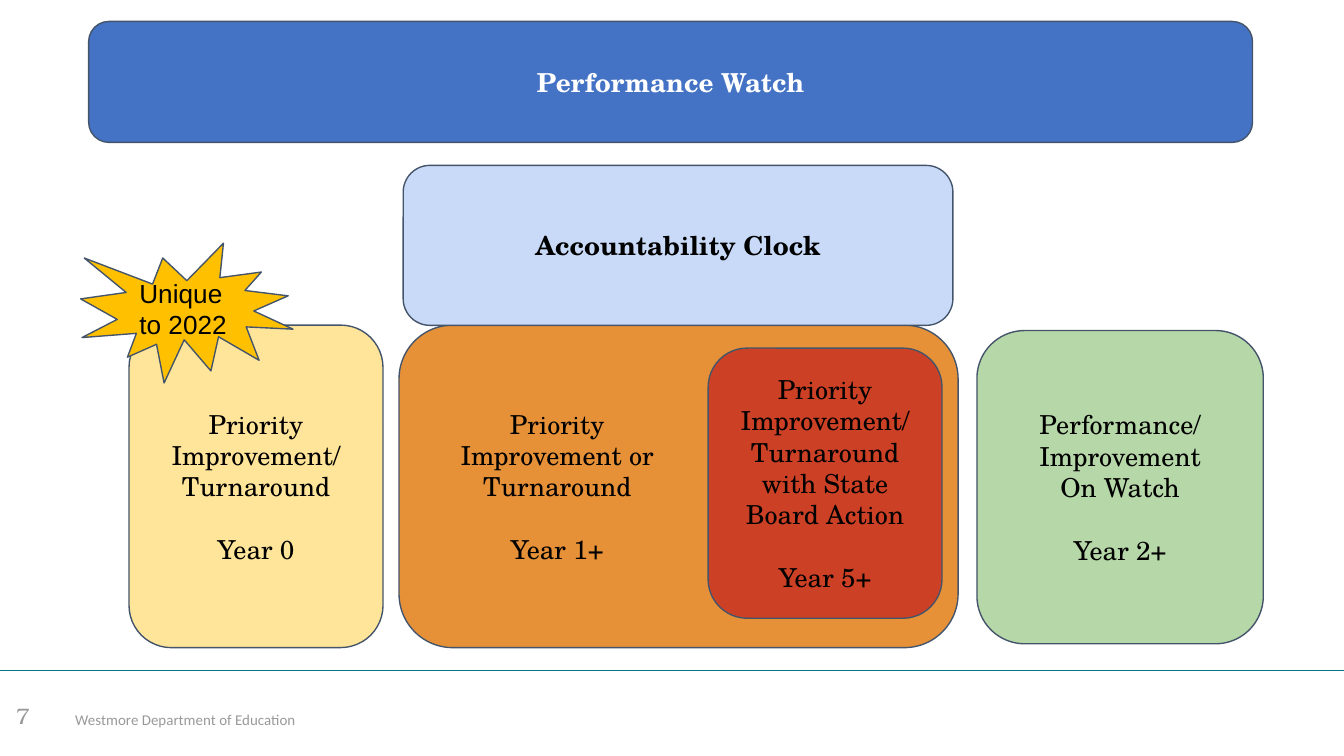
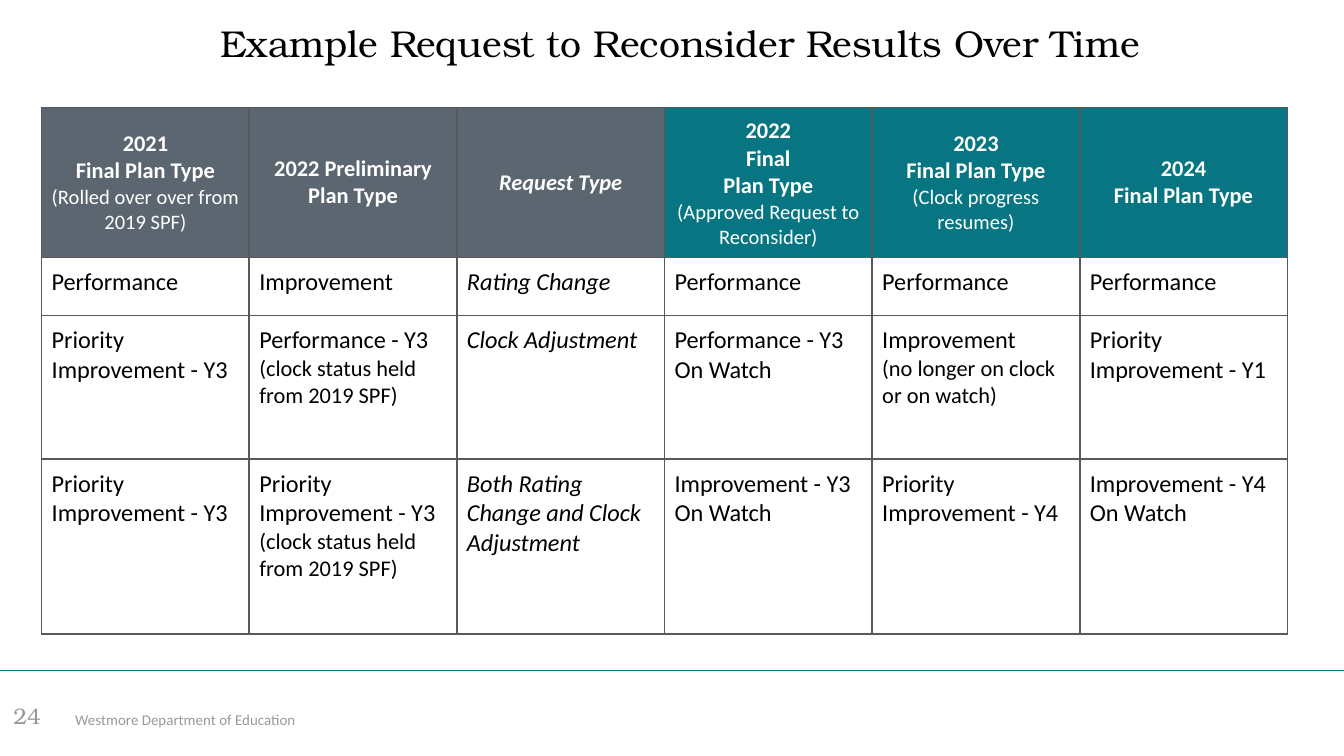
from lxml.etree import SubElement
from pptx import Presentation
from pptx.dml.color import RGBColor
from pptx.enum.shapes import MSO_CONNECTOR as CONNECTOR, MSO_SHAPE as SHAPE
from pptx.enum.text import MSO_ANCHOR as ANCHOR, PP_ALIGN as ALIGN
from pptx.oxml.ns import qn
from pptx.util import Pt

WHITE = RGBColor(0xFF, 0xFF, 0xFF)
BLACK = RGBColor(0x00, 0x00, 0x00)
GRAY = RGBColor(0x99, 0x99, 0x99)
TEAL = RGBColor(0x07, 0x76, 0x82)
SLATE = RGBColor(0x5C, 0x66, 0x70)
OUTLINE = RGBColor(0x44, 0x54, 0x6A)
GRID = RGBColor(0x59, 0x59, 0x59)
BLUE = RGBColor(0x44, 0x72, 0xC4)
PALE_BLUE = RGBColor(0xC9, 0xDA, 0xF8)
ORANGE = RGBColor(0xE6, 0x91, 0x38)
YELLOW = RGBColor(0xFF, 0xE5, 0x99)
GREEN = RGBColor(0xB6, 0xD7, 0xA8)
RED = RGBColor(0xCC, 0x41, 0x25)
GOLD = RGBColor(0xFF, 0xC0, 0x00)

BODY_FONT = "Calibri"
TITLE_FONT = "TeX Gyre Bonum"
BOX_FONT = "TeX Gyre Schola"

PLAN_ROWS = [
    ["2021\nFinal Plan Type\n(Rolled over over from 2019 SPF)", "2022 Preliminary Plan Type",
     "Request Type", "2022\nFinal\nPlan Type\n(Approved Request to Reconsider)",
     "2023\nFinal Plan Type\n(Clock progress resumes)", "2024\nFinal Plan Type"],
    ["Performance", "Improvement", "Rating Change", "Performance", "Performance",
     "Performance"],
    ["Priority Improvement - Y3", "Performance - Y3 (clock status held from 2019 SPF)",
     "Clock Adjustment", "Performance - Y3 On Watch",
     "Improvement\n(no longer on clock or on watch)", "Priority Improvement - Y1"],
    ["Priority Improvement - Y3",
     "Priority Improvement - Y3 (clock status held from 2019 SPF)",
     "Both Rating Change and Clock Adjustment", "Improvement - Y3 On Watch",
     "Priority Improvement - Y4", "Improvement - Y4 On Watch"],
]
ROW_HEIGHTS = [72, 31, 77, 93.6]
COLUMN_WIDTH = 111.24
REQUEST_COLUMN = 2


def write(frame, text, size=14, font=BODY_FONT, color=BLACK, bold=False, italic=False,
          align=ALIGN.LEFT, note_size=None, last_gap=0):
    """Fill a text frame line by line, with parenthesised notes in their own size."""
    frame.word_wrap = True
    lines = text.split("\n")
    for index, line in enumerate(lines):
        paragraph = frame.paragraphs[0] if index == 0 else frame.add_paragraph()
        paragraph.alignment = align
        if index and index == len(lines) - 1:
            paragraph.space_before = Pt(last_gap)
        main, bracket, rest = line.partition("(")
        for words, is_note in ((main, False), (bracket + rest, True)):
            if words:
                run = paragraph.add_run()
                run.text = words
                run.font.size = Pt(note_size if is_note and note_size else size)
                run.font.name = font
                run.font.color.rgb = color
                run.font.bold = bold and not is_note
                run.font.italic = italic


def set_insets(target, inset, right=None):
    """Set the inner margins of a text frame or table cell."""
    target.margin_left = target.margin_top = target.margin_bottom = Pt(inset)
    target.margin_right = Pt(inset if right is None else right)


def set_borders(cell):
    """Draw the grid line on all four sides of a cell."""
    properties = cell._tc.get_or_add_tcPr()
    for position, side in enumerate(("a:lnL", "a:lnR", "a:lnT", "a:lnB")):
        border = SubElement(properties, qn(side), w=str(Pt(1)))
        fill = SubElement(border, qn("a:solidFill"))
        SubElement(fill, qn("a:srgbClr"), val=str(GRID))
        properties.insert(position, border)


class Deck:
    """Holds the shared style and the current slide."""

    def __init__(self):
        """Start an empty presentation."""
        self.presentation = Presentation()
        self.presentation.slide_width = Pt(720)
        self.presentation.slide_height = Pt(405)
        self.slide = None

    def new_slide(self, number, number_left):
        """Add a blank slide with the shared footer."""
        self.slide = self.presentation.slides.add_slide(self.presentation.slide_layouts[6])
        self.label(40.3, 380.9, 232.6, 9.4, "Westmore Department of Education",
                   size=8, color=GRAY)
        self.rule(359.3)
        self.label(number_left, 367.9, 43.2, 31, number, anchor=ANCHOR.MIDDLE,
                   size=12, font=TITLE_FONT, color=GRAY)

    def label(self, left, top, width, height, text, inset=0, anchor=ANCHOR.TOP, **style):
        """Add a text box."""
        box = self.slide.shapes.add_textbox(Pt(left), Pt(top), Pt(width), Pt(height))
        set_insets(box.text_frame, inset)
        box.text_frame.vertical_anchor = anchor
        write(box.text_frame, text, **style)

    def rule(self, top):
        """Add a teal line across the slide."""
        line = self.slide.shapes.add_connector(
            CONNECTOR.STRAIGHT, Pt(0), Pt(top), Pt(720), Pt(top))
        line.line.color.rgb = TEAL
        line.line.width = Pt(0.75)
        SubElement(line._element.spPr, qn("a:effectLst"))

    def box(self, left, top, width, height, fill, text, right=7.2,
            kind=SHAPE.FLOWCHART_ALTERNATE_PROCESS, font=BOX_FONT, align=ALIGN.CENTER,
            **style):
        """Add a filled, outlined shape with text."""
        shape = self.slide.shapes.add_shape(kind, Pt(left), Pt(top), Pt(width), Pt(height))
        shape.shadow.inherit = False
        shape.fill.solid()
        shape.fill.fore_color.rgb = fill
        shape.line.color.rgb = OUTLINE
        shape.line.width = Pt(0.75)
        set_insets(shape.text_frame, 7.2, right)
        shape.text_frame.vertical_anchor = ANCHOR.MIDDLE
        write(shape.text_frame, text, font=font, align=align, **style)

    def table(self, left, top, rows, heights, column_width):
        """Add the plan type table with a coloured header row."""
        columns = len(rows[0])
        grid = self.slide.shapes.add_table(
            len(rows), columns, Pt(left), Pt(top),
            Pt(column_width * columns), Pt(sum(heights))).table
        grid.first_row = grid.horz_banding = False
        for column in grid.columns:
            column.width = Pt(column_width)
        for r, (texts, height) in enumerate(zip(rows, heights)):
            grid.rows[r].height = Pt(height)
            for c, text in enumerate(texts):
                self.cell(grid.cell(r, c), text, r == 0, c)

    def cell(self, cell, text, is_header, column):
        """Format and fill one table cell."""
        set_insets(cell, 5.4)
        italic = column == REQUEST_COLUMN
        if is_header:
            cell.fill.solid()
            cell.fill.fore_color.rgb = SLATE if column <= REQUEST_COLUMN else TEAL
            cell.vertical_anchor = ANCHOR.MIDDLE
            write(cell.text_frame, text, size=12, note_size=11, color=WHITE, bold=True,
                  italic=italic, align=ALIGN.CENTER)
        else:
            if italic:
                cell.fill.solid()
                cell.fill.fore_color.rgb = WHITE
            else:
                cell.fill.background()
            write(cell.text_frame, text, size=13, note_size=12, italic=italic)
        set_borders(cell)


def build_watch_slide(deck):
    """Show how the clock years sit under performance watch."""
    year_gap = 16.8
    deck.new_slide("7", 8.6)
    deck.box(47.5, 11.5, 623.5, 64.8, BLUE, "Performance Watch", color=WHITE, bold=True)
    deck.box(213.8, 174.2, 299.5, 172.8, ORANGE,
             "Priority Improvement or Turnaround\nYear 1+", right=137, last_gap=year_gap)
    deck.box(69.1, 174.2, 136.1, 172.8, YELLOW,
             "Priority Improvement/ Turnaround\nYear 0", last_gap=year_gap)
    deck.box(523.4, 177.1, 153.4, 167.8, GREEN,
             "Performance/ Improvement\nOn Watch\nYear 2+", last_gap=year_gap)
    deck.box(379.4, 186.5, 125.3, 144.7, RED,
             "Priority Improvement/ Turnaround with State Board Action\nYear 5+",
             last_gap=year_gap)
    deck.box(216, 88.6, 294.5, 85.7, PALE_BLUE, "Accountability Clock", bold=True)
    deck.box(43.2, 130.3, 113.8, 74.9, GOLD, "Unique to 2022", kind=SHAPE.EXPLOSION1,
             font="Arial", align=ALIGN.LEFT)


def build_request_slide(deck):
    """Show example results of reconsideration requests."""
    deck.new_slide("24", 7.2)
    deck.table(22.3, 57.6, PLAN_ROWS, ROW_HEIGHTS, COLUMN_WIDTH)
    deck.label(15.1, 3.6, 698.4, 38.9, "Example Request to Reconsider Results Over Time",
               inset=7.2, size=20, font=TITLE_FONT, align=ALIGN.CENTER)


def main():
    """Build and save both slides."""
    deck = Deck()
    build_watch_slide(deck)
    build_request_slide(deck)
    deck.presentation.save("out.pptx")


if __name__ == "__main__":
    main()
